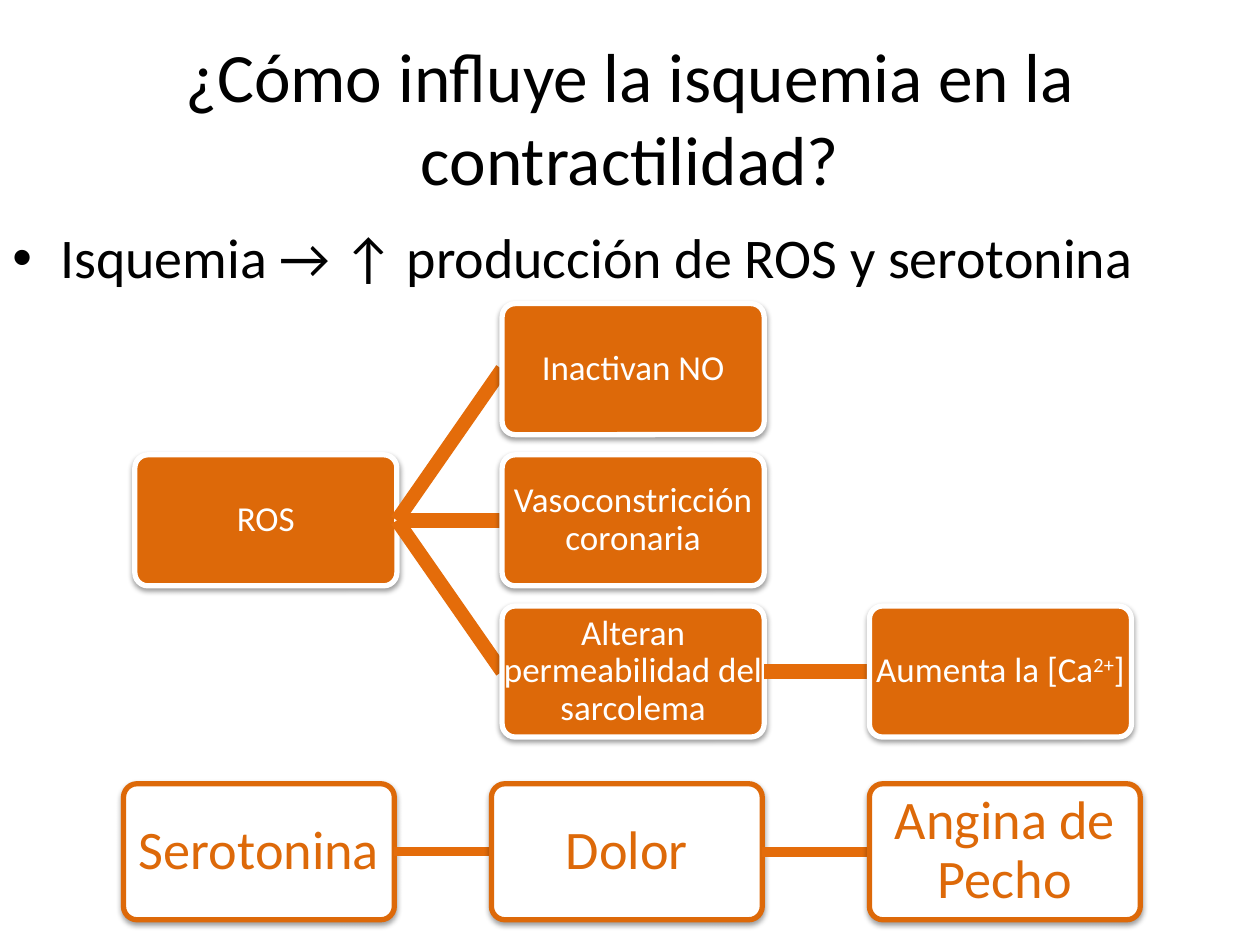
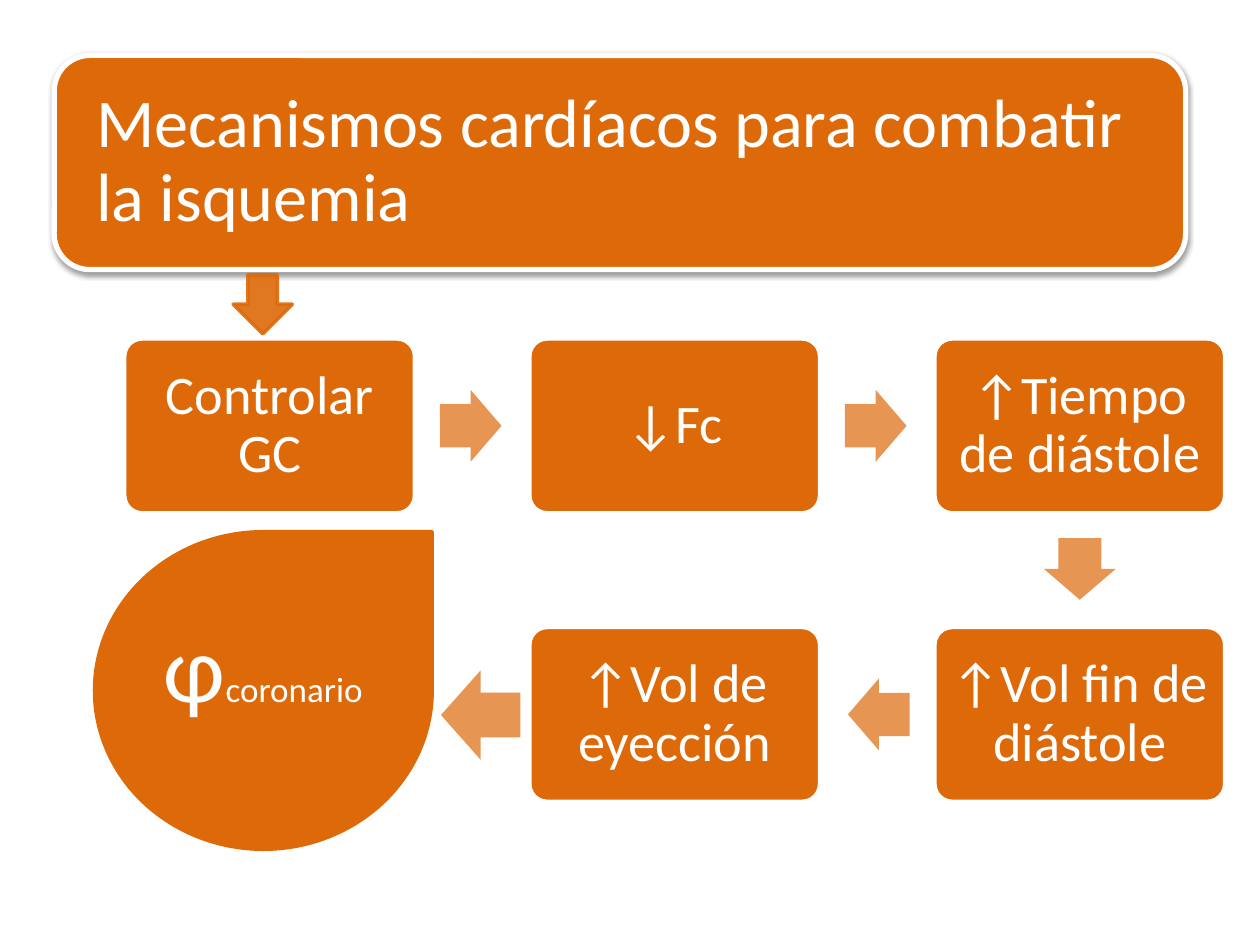
from dataclasses import dataclass

from lxml import etree
from pptx import Presentation
from pptx.dml.color import RGBColor
from pptx.enum.shapes import MSO_CONNECTOR, MSO_SHAPE
from pptx.enum.text import MSO_ANCHOR, PP_ALIGN
from pptx.oxml.ns import qn
from pptx.util import Inches, Pt

ROUNDED = MSO_SHAPE.ROUNDED_RECTANGLE
RIGHT_ARROW = MSO_SHAPE.RIGHT_ARROW
LEFT_ARROW = MSO_SHAPE.LEFT_ARROW
DOWN_ARROW = MSO_SHAPE.DOWN_ARROW
TEARDROP = MSO_SHAPE.TEAR
STRAIGHT = MSO_CONNECTOR.STRAIGHT
MIDDLE = MSO_ANCHOR.MIDDLE
LEFT, CENTER = PP_ALIGN.LEFT, PP_ALIGN.CENTER


@dataclass(frozen=True)
class Theme:
    font: str = "Calibri"
    orange: str = "DD6909"
    link: str = "E46C0A"
    white: str = "FFFFFF"
    black: str = "000000"
    title: float = 39.6
    banner: float = 39
    body: float = 32
    step: float = 31
    small: float = 20
    symbol: float = 54


THEME = Theme()


# Shared helpers
def inches(*lengths):
    return [Inches(length) for length in lengths]


def add_run(paragraph, text, size, color, baseline=None):
    run = paragraph.add_run()
    run.text = text
    run.font.name = THEME.font
    run.font.size = Pt(size)
    run.font.color.rgb = RGBColor.from_string(color)
    if baseline:
        run._r.get_or_add_rPr().set("baseline", str(baseline))


def prepare_text(shape, align=CENTER, insets=(0.1, 0.05, 0.1, 0.05), anchor=MIDDLE):
    frame = shape.text_frame
    frame.word_wrap = True
    frame.vertical_anchor = anchor
    (frame.margin_left, frame.margin_top,
     frame.margin_right, frame.margin_bottom) = inches(*insets)
    paragraph = frame.paragraphs[0]
    paragraph.alignment = align
    return paragraph


def add_soft_shadow(shape):
    effects = shape._element.spPr.find(qn("a:effectLst"))
    shadow = etree.SubElement(effects, qn("a:outerShdw"), blurRad="40000",
                              dist="20000", dir="5400000", rotWithShape="0")
    color = etree.SubElement(shadow, qn("a:srgbClr"), val=THEME.black)
    etree.SubElement(color, qn("a:alpha"), val="38000")


def add_figure(slide, kind, box, fill, line=None, width=2, opacity=100, shadow=False):
    shape = slide.shapes.add_shape(kind, *inches(*box))
    shape.shadow.inherit = False
    shape.fill.solid()
    shape.fill.fore_color.rgb = RGBColor.from_string(fill)
    if line:
        shape.line.color.rgb = RGBColor.from_string(line)
        shape.line.width = Pt(width)
    else:
        shape.line.fill.background()
    if opacity < 100:
        for color in shape._element.spPr.iter(qn("a:srgbClr")):
            etree.SubElement(color, qn("a:alpha"), val=str(opacity * 1000))
    if shadow:
        add_soft_shadow(shape)
    return shape


def add_node(slide, box, lines, size, inset, fill=THEME.orange, ink=THEME.white,
             line=THEME.white, width=3, shadow=True):
    """Rounded box; each line is a list of (text, baseline) runs."""
    shape = add_figure(slide, ROUNDED, box, fill, line, width, shadow=shadow)
    shape.adjustments[0] = 0.1
    paragraph = prepare_text(shape, insets=[inset] * 4)
    paragraph.line_spacing = 0.9
    shape.text_frame.word_wrap = len(lines) == 1
    for index, runs in enumerate(lines):
        if index:
            paragraph.add_line_break()
        for text, baseline in runs:
            add_run(paragraph, text, size, ink, baseline)


def add_link(slide, start, end, width):
    link = slide.shapes.add_connector(STRAIGHT, *inches(*start, *end))
    link.line.color.rgb = RGBColor.from_string(THEME.link)
    link.line.width = Pt(width)
    etree.SubElement(link._element.spPr, qn("a:effectLst"))


def plain(text):
    return [[(text, None)]]


# Slide 1: heading and bullet
def add_title(slide, box, text):
    paragraph = prepare_text(slide.shapes.add_textbox(*inches(*box)))
    add_run(paragraph, text, THEME.title, THEME.black)


def add_bullet(slide, box, text):
    paragraph = prepare_text(slide.shapes.add_textbox(*inches(*box)), LEFT,
                             anchor=MSO_ANCHOR.TOP)
    properties = paragraph._p.get_or_add_pPr()
    properties.set("marL", str(Inches(0.38)))
    properties.set("indent", str(-Inches(0.38)))
    etree.SubElement(properties, qn("a:buFont"), typeface="Arial")
    etree.SubElement(properties, qn("a:buChar"), char="•")
    add_run(paragraph, text, THEME.body, THEME.black)


# Slide 1: effects of ROS as a tree
def add_ros_tree(slide, left, top):
    width, height, column, row = 2.08, 1.04, 2.915, 1.2

    def add_branch(position, lines, parent=None, link_width=0):
        x, y = left + position[0] * column, top + position[1] * row
        if parent:
            start = (left + parent[0] * column + width,
                     top + parent[1] * row + height / 2)
            add_link(slide, start, (x, y + height / 2), link_width)
        add_node(slide, (x, y, width, height), lines, THEME.small, 0)

    root, last_effect = (0, 1), (1, 2)
    add_branch(root, plain("ROS"))
    add_branch((1, 0), plain("Inactivan NO"), root, 8)
    add_branch((1, 1), plain("Vasoconstricción coronaria"), root, 8.5)
    add_branch(last_effect, [[("Alteran", None)], [("permeabilidad del", None)],
                             [("sarcolema", None)]], root, 8)
    add_branch((2, 2), [[("Aumenta la [Ca", None), ("2+", 30000), ("]", None)]],
               last_effect, 9)


# Slide 1: serotonin chain
def add_serotonin_chain(slide, left, top):
    width, height = 2.15, 1.08
    chain = [(0, "Serotonina", 0), (2.92, "Dolor", 5.25), (5.92, "Angina de Pecho", 5.5)]
    previous_right = None
    for offset, text, link_width in chain:
        x = left + offset
        if previous_right:
            middle = top + height / 2
            add_link(slide, (previous_right, middle), (x, middle), link_width)
        add_node(slide, (x, top, width, height), plain(text), THEME.step, 0.01,
                 THEME.white, THEME.orange, THEME.orange)
        previous_right = x + width


# Slide 2: banner
def add_banner(slide, box, text):
    banner = add_figure(slide, ROUNDED, box, THEME.orange, THEME.white, 3, shadow=True)
    paragraph = prepare_text(banner, LEFT, (0.25, 0.08, 0.08, 0.08))
    paragraph.line_spacing = 0.9
    add_run(paragraph, text, THEME.banner, THEME.white)


# Slide 2: steps that turn back on the second row
def add_step_flow(slide, left, top):
    width, height, column, row = 2.3, 1.38, 3.215, 2.29
    arrow_width, arrow_height, gap = 0.49, 0.57, 0.2
    reach = gap + arrow_width / 2
    # column, row, text, direction of the arrow that follows
    steps = [
        (0, 0, "Controlar GC", (1, 0, 0)),
        (1, 0, "↓Fc", (1, 0, 0)),
        (2, 0, "↑Tiempo de diástole", (0, 1, 90)),
        (2, 1, "↑Vol fin de diástole", (-1, 0, 180)),
        (1, 1, "↑Vol de eyección", None),
    ]
    for column_index, row_index, text, direction in steps:
        x, y = left + column_index * column, top + row_index * row
        add_node(slide, (x, y, width, height), plain(text), THEME.step, 0.09,
                 width=2, shadow=False)
        if direction:
            across, down, angle = direction
            center_x = x + width / 2 + across * (width / 2 + reach)
            center_y = y + height / 2 + down * (height / 2 + reach)
            arrow = add_figure(slide, RIGHT_ARROW,
                               (center_x - arrow_width / 2, center_y - arrow_height / 2,
                                arrow_width, arrow_height), THEME.orange, opacity=70)
            arrow.adjustments[0] = 0.6
            arrow.rotation = angle


# Slide 2: coronary flow result
def add_coronary_flow(slide, box):
    drop = add_figure(slide, TEARDROP, box, THEME.orange, THEME.orange)
    paragraph = prepare_text(drop, insets=(0.1, 0.05, 0.1, 0.46))
    add_run(paragraph, "φ", THEME.symbol, THEME.white)
    add_run(paragraph, "coronario", THEME.small, THEME.white)
    left, top, width, _ = box
    add_figure(slide, LEFT_ARROW, (left + width + 0.07, top + 1.1, 0.63, 0.71),
               THEME.orange, opacity=70)


def build_ischemia_slide(slide):
    add_title(slide, (0.5, 0.3, 9, 1.25), "¿Cómo influye la isquemia en la contractilidad?")
    add_bullet(slide, (0, 1.72, 9.8, 0.65), "Isquemia → ↑ producción de ROS y serotonina")
    add_ros_tree(slide, 1.07, 2.41)
    add_serotonin_chain(slide, 0.98, 6.22)


def build_mechanisms_slide(slide):
    add_banner(slide, (0.43, 0.44, 8.98, 1.7),
               "Mecanismos cardíacos para combatir la isquemia")
    add_step_flow(slide, 0.99, 2.69)
    add_coronary_flow(slide, (0.75, 4.22, 2.68, 2.52))
    add_figure(slide, DOWN_ARROW, (1.85, 2.18, 0.47, 0.47), THEME.orange,
               THEME.orange, opacity=90)


def main():
    presentation = Presentation()
    presentation.slide_width, presentation.slide_height = inches(10, 7.5)
    blank = presentation.slide_layouts[6]
    for build in (build_ischemia_slide, build_mechanisms_slide):
        build(presentation.slides.add_slide(blank))
    presentation.save("out.pptx")


if __name__ == "__main__":
    main()
